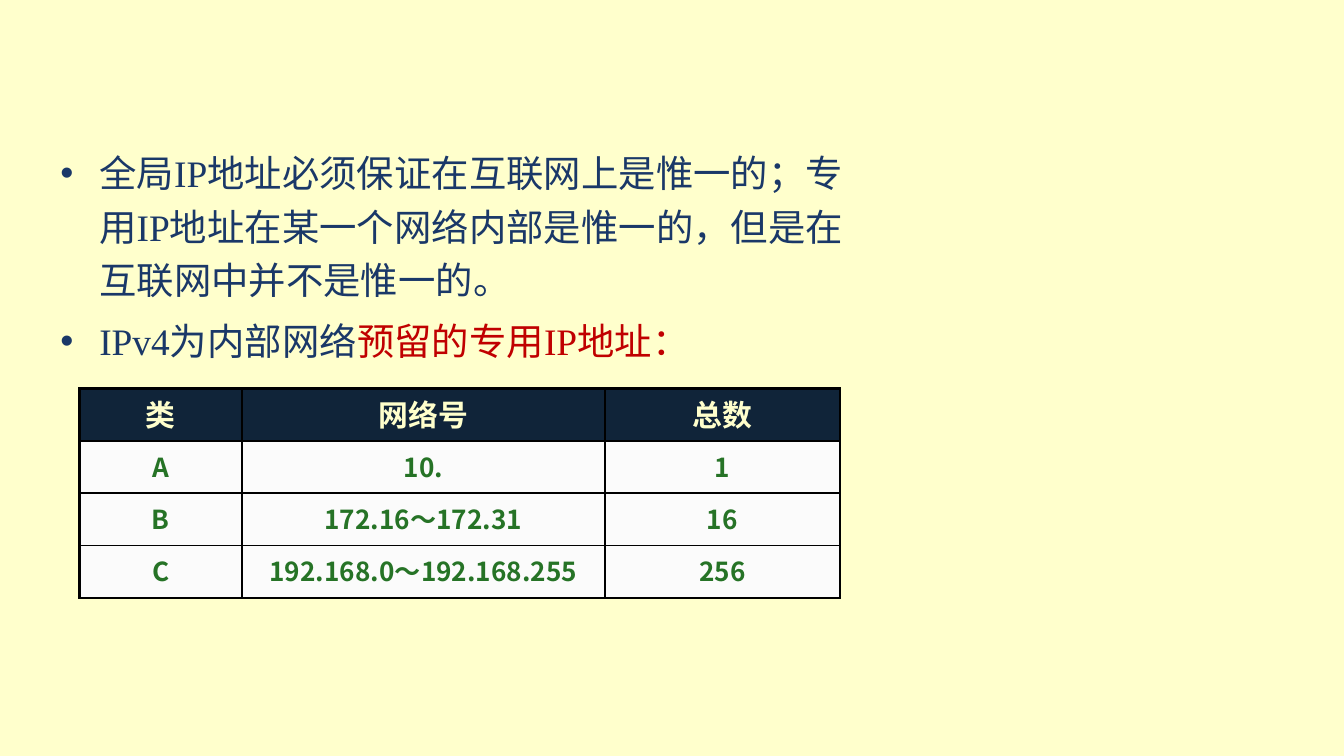
from dataclasses import dataclass

from lxml import etree
from pptx import Presentation
from pptx import util as u
from pptx.dml.color import RGBColor
from pptx.enum import text
from pptx.oxml import ns


@dataclass(frozen=True)
class Theme:
    background: str = "FFFFCC"
    body: str = "1A3868"
    highlight: str = "C00000"
    header_fill: str = "102439"
    cell_fill: str = "FBFBFB"
    cell_text: str = "267326"
    border: str = "000000"
    serif: str = "Times New Roman"
    sans: str = "Noto Sans CJK SC"
    body_size: int = 20
    header_size: int = 16
    cell_size: int = 14
    outer_line: float = 1.5
    inner_line: float = 1


@dataclass(frozen=True)
class Run:
    text: str
    color: str
    size: int
    font: str
    bold: bool = False


THEME = Theme()


def body_run(words: str, color: str = THEME.body) -> Run:
    return Run(words, color, THEME.body_size, THEME.serif)


BULLETS = [
    [body_run("全局IP地址必须保证在互联网上是惟一的；专用IP地址在某一个网络内部"
              "是惟一的，但是在互联网中并不是惟一的。")],
    [body_run("IPv4为内部网络"), body_run("预留的专用IP地址：", THEME.highlight)],
]
PRIVATE_RANGES = [
    ("类", "网络号", "总数"),
    ("A", "10.", "1"),
    ("B", "172.16～172.31", "16"),
    ("C", "192.168.0～192.168.255", "256"),
]
COLUMN_WIDTHS = (1.21, 2.7, 1.75)
ROW_HEIGHT = 0.39


def add_run(paragraph, item: Run) -> None:
    run = paragraph.add_run()
    run.text = item.text
    values = {"name": item.font, "size": u.Pt(item.size), "bold": item.bold}
    for name, value in values.items():
        setattr(run.font, name, value)
    run.font.color.rgb = RGBColor.from_string(item.color)
    etree.SubElement(run.font._element, ns.qn("a:ea"), typeface=THEME.sans)


def add_bullets(slide) -> None:
    box = slide.shapes.add_textbox(
        u.Inches(0.35), u.Inches(1), u.Inches(6.21), u.Inches(1.97))
    frame = box.text_frame
    frame.word_wrap = True
    for index, runs in enumerate(BULLETS):
        paragraph = frame.add_paragraph() if index else frame.paragraphs[0]
        properties = paragraph._p.get_or_add_pPr()
        properties.set("marL", str(u.Inches(0.29)))
        properties.set("indent", str(u.Inches(-0.29)))
        etree.SubElement(properties, ns.qn("a:buFont"), typeface="Arial")
        etree.SubElement(properties, ns.qn("a:buChar"), char="•")
        paragraph.line_spacing = 1.2
        if index:
            paragraph.space_before = u.Pt(4)
        for run in runs:
            add_run(paragraph, run)


def set_borders(cell, widths: dict[str, float]) -> None:
    """Draw the cell's sides; the keys run in schema order L, R, T, B."""
    properties = cell._tc.get_or_add_tcPr()
    for side, width in widths.items():
        line = etree.SubElement(
            properties, ns.qn(f"a:ln{side}"), w=str(u.Pt(width)))
        fill = etree.SubElement(line, ns.qn("a:solidFill"))
        etree.SubElement(fill, ns.qn("a:srgbClr"), val=THEME.border)


def fill_cell(cell, run: Run, fill: str) -> None:
    values = {
        "margin_left": u.Inches(0.07), "margin_right": u.Inches(0.07),
        "margin_top": 0, "margin_bottom": u.Inches(0.02),
        "vertical_anchor": text.MSO_ANCHOR.MIDDLE,
    }
    for name, value in values.items():
        setattr(cell, name, value)
    cell.fill.solid()
    cell.fill.fore_color.rgb = RGBColor.from_string(fill)
    paragraph = cell.text_frame.paragraphs[0]
    paragraph.alignment = text.PP_ALIGN.CENTER
    add_run(paragraph, run)


def add_range_table(slide) -> None:
    rows, columns = len(PRIVATE_RANGES), len(COLUMN_WIDTHS)
    table = slide.shapes.add_table(
        rows, columns, u.Inches(0.59), u.Inches(2.89),
        u.Inches(sum(COLUMN_WIDTHS)), u.Inches(ROW_HEIGHT * rows)).table
    for column, width in zip(table.columns, COLUMN_WIDTHS):
        column.width = u.Inches(width)

    def line_width(heavy: bool) -> float:
        return THEME.outer_line if heavy else THEME.inner_line

    for r, labels in enumerate(PRIVATE_RANGES):
        table.rows[r].height = u.Inches(ROW_HEIGHT)
        for c, label in enumerate(labels):
            cell = table.cell(r, c)
            set_borders(cell, {
                "L": line_width(c == 0),
                "R": line_width(c == columns - 1),
                "T": line_width(r <= 1),
                "B": line_width(r in (0, rows - 1)),
            })
            if r == 0:
                run = Run(label, THEME.background, THEME.header_size, THEME.serif, True)
                fill_cell(cell, run, THEME.header_fill)
            else:
                run = Run(label, THEME.cell_text, THEME.cell_size, THEME.sans, True)
                fill_cell(cell, run, THEME.cell_fill)


def main() -> None:
    presentation = Presentation()
    presentation.slide_width = u.Inches(10)
    presentation.slide_height = u.Inches(10) * 9 // 16
    slide = presentation.slides.add_slide(presentation.slide_layouts[6])
    slide.background.fill.solid()
    slide.background.fill.fore_color.rgb = RGBColor.from_string(THEME.background)
    add_bullets(slide)
    add_range_table(slide)
    presentation.save("out.pptx")


if __name__ == "__main__":
    main()
